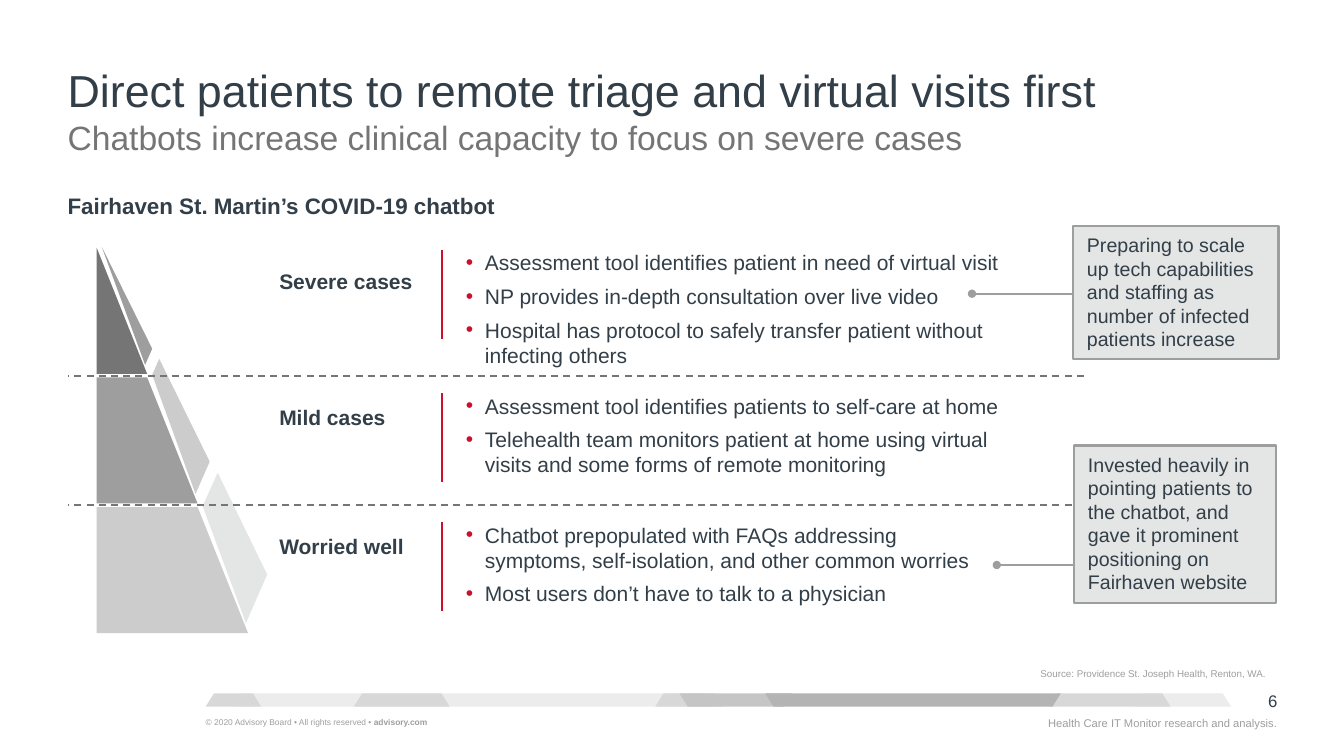
from lxml import etree
from pptx import Presentation
from pptx import util as u
from pptx.dml.color import RGBColor
from pptx.enum import dml, shapes, text
from pptx.oxml.ns import qn

FONT = "Arial"
INK, DARK, MID, LIGHT, PALE = "323E48", "757576", "9E9E9E", "CCCCCC", "E4E5E5"
RED = "CE0E2D"


def color(hex_code):
    return RGBColor.from_string(hex_code)


def set_font(font, size, hex_code, bold=False):
    font.name, font.size, font.bold = FONT, u.Pt(size), bold
    font.color.rgb = color(hex_code)


def set_fill(shape, hex_code):
    shape.shadow.inherit = False
    shape.fill.solid()
    shape.fill.fore_color.rgb = color(hex_code)
    shape.line.fill.background()


def set_frame(frame, margins=(0, 0), anchor=text.MSO_ANCHOR.TOP):
    frame.word_wrap = True
    frame.auto_size = text.MSO_AUTO_SIZE.NONE
    frame.vertical_anchor = anchor
    frame.margin_left = frame.margin_right = u.Inches(margins[0])
    frame.margin_top = frame.margin_bottom = u.Inches(margins[1])


def add_text(slide, box, words, size, hex_code=INK, bold=False,
             align=text.PP_ALIGN.LEFT, anchor=text.MSO_ANCHOR.TOP):
    frame = slide.shapes.add_textbox(*map(u.Inches, box)).text_frame
    set_frame(frame, anchor=anchor)
    paragraph = frame.paragraphs[0]
    paragraph.text = words
    paragraph.alignment = align
    set_font(paragraph.font, size, hex_code, bold)
    return paragraph


def add_line(slide, start, end, hex_code, width, dash=None):
    line = slide.shapes.add_connector(
        shapes.MSO_CONNECTOR.STRAIGHT, *map(u.Inches, start + end))
    line.line.color.rgb = color(hex_code)
    line.line.width = u.Pt(width)
    line.line.dash_style = dash
    etree.SubElement(line._element.spPr, qn("a:effectLst"))


def add_polygon(slide, points, hex_code):
    points = [(u.Inches(x), u.Inches(y)) for x, y in points]
    builder = slide.shapes.build_freeform(*points[0])
    builder.add_line_segments(points[1:], close=True)
    set_fill(builder.convert_to_shape(), hex_code)


def add_bullet(paragraph):
    properties = paragraph._p.get_or_add_pPr()
    properties.set("marL", str(u.Inches(0.19)))
    properties.set("indent", str(-u.Inches(0.19)))
    bullet_color = etree.SubElement(properties, qn("a:buClr"))
    etree.SubElement(bullet_color, qn("a:srgbClr"), val=RED)
    etree.SubElement(properties, qn("a:buFont"), typeface=FONT)
    etree.SubElement(properties, qn("a:buChar"), char="•")


def add_heading(slide, left, top, width):
    title = slide.shapes.title
    title.left, title.top = u.Inches(left), u.Inches(top)
    title.width, title.height = u.Inches(width), u.Inches(0.5)
    set_frame(title.text_frame, anchor=text.MSO_ANCHOR.BOTTOM)
    headline = title.text_frame.paragraphs[0]
    headline.text = "Direct patients to remote triage and virtual visits first"
    headline.alignment = text.PP_ALIGN.LEFT
    headline.line_spacing = 0.9
    set_font(headline.font, 32, INK)
    subtitle = add_text(
        slide, (left, top + 0.55, width, 0.37),
        "Chatbots increase clinical capacity to focus on severe cases", 24, DARK)
    subtitle.line_spacing = 0.9
    add_text(slide, (left, top + 1.25, 4.56, 0.27),
             "Fairhaven St. Martin’s COVID-19 chatbot", 16, bold=True)


def add_pyramid(slide, left, top):
    # Front face: three tiers, each half an inch wider than the one above
    tier_height, pitch, step = 1.25, 1.285, 0.5
    for tier, shade in enumerate((DARK, MID, LIGHT)):
        y = top + tier * pitch
        x = left + tier * step
        add_polygon(slide, [(left, y), (x, y), (x + step, y + tier_height),
                            (left, y + tier_height)], shade)

    # Side faces, measured from the apex
    sides = (
        (MID, [(0.05, -0.01), (0.55, 1), (0.48, 1.16)]),
        (LIGHT, [(0.62, 1.1), (1.12, 2.12), (0.98, 2.44), (0.55, 1.26)]),
        (PALE, [(1.2, 2.23), (1.69, 3.24), (1.48, 3.72), (1.05, 2.56)]),
    )
    for shade, points in sides:
        add_polygon(slide, [(left + x, top + y) for x, y in points], shade)


def add_case_row(slide, left, top, label, label_drop, bullets):
    add_text(slide, (left, top + label_drop, 1.34, 0.25), label, 15, bold=True)
    add_line(slide, (left + 1.61, top), (left + 1.61, top + 0.88), RED, 1.5)
    box = (left + 1.85, top, 5.3, 1.18)
    frame = slide.shapes.add_textbox(*map(u.Inches, box)).text_frame
    set_frame(frame)
    for index, words in enumerate(bullets):
        paragraph = frame.add_paragraph() if index else frame.paragraphs[0]
        paragraph.text = words
        if index:
            paragraph.space_before = u.Pt(6)
        add_bullet(paragraph)
        set_font(paragraph.font, 15, INK)


def add_callout(slide, box, pointer, words):
    callout = slide.shapes.add_shape(
        shapes.MSO_SHAPE.LINE_CALLOUT_1, *map(u.Inches, box))
    for index, value in enumerate(pointer):
        callout.adjustments[index] = value
    set_fill(callout, PALE)
    callout.line.color.rgb = color(MID)
    callout.line.width = u.Pt(1.5)
    etree.SubElement(callout.line._get_or_add_ln(), qn("a:tailEnd"), type="oval")
    set_frame(callout.text_frame, (0.14, 0.07))
    paragraph = callout.text_frame.paragraphs[0]
    paragraph.text = words
    paragraph.alignment = text.PP_ALIGN.LEFT
    set_font(paragraph.font, 14, INK)


def add_footer(slide, left, top):
    # Band of trapezoids: offset, width, rotation, shade
    height = 0.13
    band = (
        (0.31, 4.72, 0, "ECECEC"), (4.46, 0.66, 0, "D8D8D8"),
        (4.7, 1.12, 180, "C5C5C5"), (1.47, 0.95, 0, "D8D8D8"),
        (9.22, 0.95, 0, "ECECEC"), (8.37, 1.2, 0, "D8D8D8"),
        (5.55, 2.93, 180, "B4B4B4"), (0, 0.55, 0, "D8D8D8"),
    )
    for offset, width, rotation, shade in band:
        piece = slide.shapes.add_shape(
            shapes.MSO_SHAPE.TRAPEZOID,
            *map(u.Inches, (left + offset, top, width, height)))
        piece.adjustments[0] = 0.63
        piece.rotation = rotation
        set_fill(piece, shade)

    # Copyright, page number, credit and source
    notice = add_text(slide, (left, top + 0.23, 3.12, 0.1),
                      "© 2020 Advisory Board • All rights reserved • ", 6, MID)
    site = notice.add_run()
    site.text = "advisory.com"
    for run in notice.runs:
        set_font(run.font, 6, MID, run.text == site.text)
    right = text.PP_ALIGN.RIGHT
    add_text(slide, (12.17, top - 0.03, 0.5, 0.2), "6", 12, align=right)
    add_text(slide, (8.42, top + 0.23, 4.25, 0.13),
             "Health Care IT Monitor research and analysis.", 8, MID, align=right)
    add_text(slide, (10.32, top - 0.31, 2.34, 0.17),
             "Source: Providence St. Joseph Health, Renton, WA.", 7, MID,
             anchor=text.MSO_ANCHOR.BOTTOM)


def main():
    presentation = Presentation()
    presentation.slide_width = u.Inches(13.33)
    presentation.slide_height = u.Inches(7.5)
    slide = presentation.slides.add_slide(presentation.slide_layouts[5])

    add_footer(slide, 2.04, 6.88)
    add_heading(slide, 0.67, 0.66, 11.99)
    add_pyramid(slide, 0.96, 2.46)

    for y in (3.73, 5.01):
        add_line(slide, (10.75, y), (0.67, y), DARK, 1.25, dml.MSO_LINE.DASH)

    rows = (
        (2.48, "Severe cases", 0.18, (
            "Assessment tool identifies patient in need of virtual visit",
            "NP provides in-depth consultation over live video",
            "Hospital has protocol to safely transfer patient without infecting others")),
        (3.9, "Mild cases", 0.11, (
            "Assessment tool identifies patients to self-care at home",
            "Telehealth team monitors patient at home using virtual visits "
            "and some forms of remote monitoring")),
        (5.18, "Worried well", 0.11, (
            "Chatbot prepopulated with FAQs addressing symptoms, "
            "self-isolation, and other common worries",
            "Most users don’t have to talk to a physician")),
    )
    for row in rows:
        add_case_row(slide, 2.77, *row)

    add_callout(slide, (10.65, 4.42, 2.01, 1.56), (0.76, 0, 0.76, -0.38),
                "Invested heavily in pointing patients to the chatbot, and gave it "
                "prominent positioning on Fairhaven website")
    add_callout(slide, (10.64, 2.24, 2.04, 1.32), (0.51, 0, 0.51, -0.49),
                "Preparing to scale up tech capabilities and staffing as number of "
                "infected patients increase")
    presentation.save("out.pptx")


if __name__ == "__main__":
    main()
